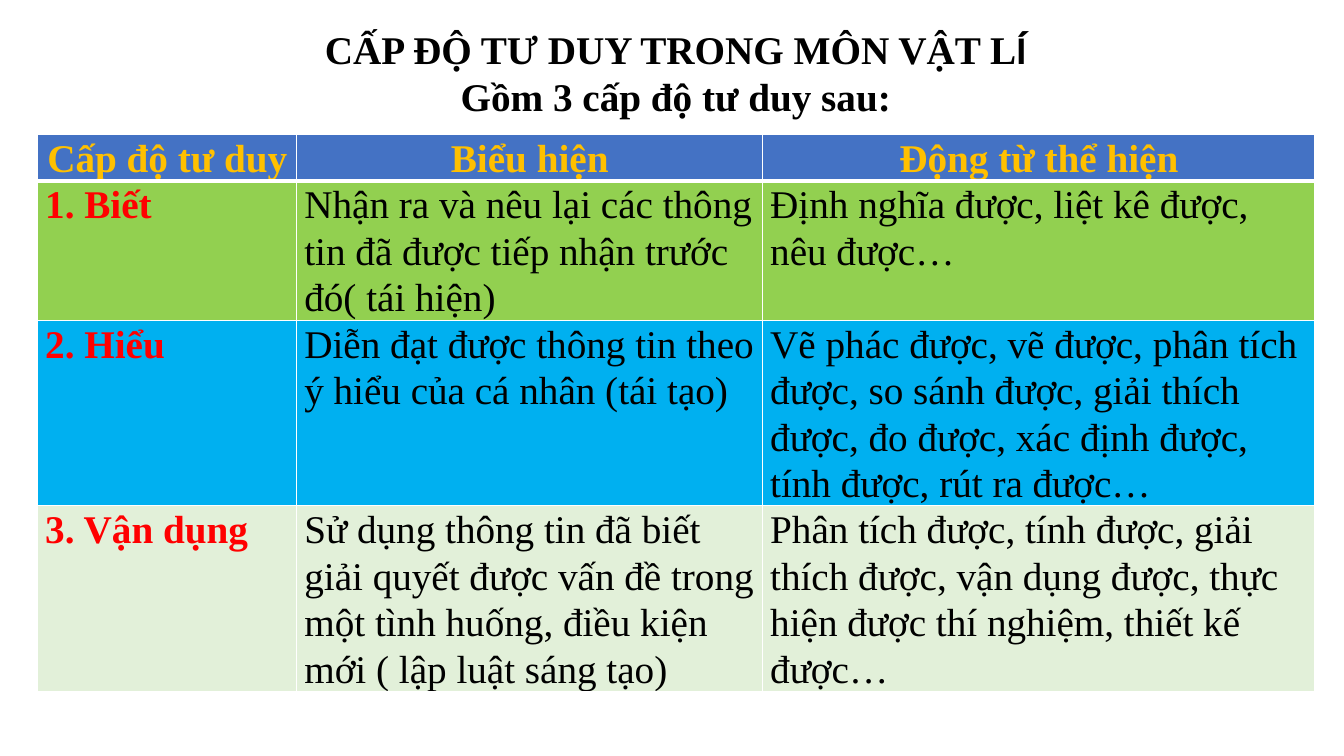
from lxml import etree
from pptx import Presentation
from pptx.dml.color import RGBColor
from pptx.enum.text import MSO_ANCHOR, PP_ALIGN
from pptx.oxml.ns import qn
from pptx.util import Cm, Pt

CENTER, LEFT = PP_ALIGN.CENTER, PP_ALIGN.LEFT
MIDDLE = MSO_ANCHOR.MIDDLE
SERIF, SANS = "Times New Roman", "Calibri"
COLORS = {
    "black": "000000", "white": "FFFFFF", "gold": "FFC000", "red": "FF0000",
    "blue": "4472C4", "green": "92D050", "sky": "00B0F0", "mint": "E2F0D9",
}
COLUMN_WIDTHS = (6.53, 11.74, 13.92)
ROW_HEIGHTS = (1.16, 3.51, 4.66, 4.66)
ROW_FILLS = ("blue", "green", "sky", "mint")
LEVELS = (
    ("Cấp độ tư duy", "Biểu hiện", "Động từ thể hiện"),
    ("1. Biết",
     "Nhận ra và nêu lại các thông tin đã được tiếp nhận trước đó( tái hiện)",
     "Định nghĩa được, liệt kê được, nêu được…"),
    ("2. Hiểu",
     "Diễn đạt được thông tin theo ý hiểu của cá nhân (tái tạo)",
     "Vẽ phác được, vẽ được, phân tích được, so sánh được, giải thích được, "
     "đo được, xác định được, tính được, rút ra được…"),
    ("3. Vận dụng",
     "Sử dụng thông tin đã biết giải quyết được vấn đề trong một tình huống, "
     "điều kiện mới ( lập luật sáng tạo)",
     "Phân tích được, tính được, giải thích được, vận dụng được, "
     "thực hiện được thí nghiệm, thiết kế được…"),
)


def add_run(paragraph, text, font=SERIF, size=28, color="black", bold=True):
    run = paragraph.add_run()
    run.text = text
    run.font.name = font
    run.font.size = Pt(size)
    run.font.bold = bold
    run.font.color.rgb = RGBColor.from_string(COLORS[color])


def set_borders(cell, widths, color="white"):
    """Draw the left, right, top and bottom borders, widths in points."""
    properties = cell._tc.get_or_add_tcPr()
    for index, (side, width) in enumerate(zip("LRTB", widths)):
        line = etree.Element(qn(f"a:ln{side}"), w=str(Pt(width)))
        fill = etree.SubElement(line, qn("a:solidFill"))
        etree.SubElement(fill, qn("a:srgbClr"), val=COLORS[color])
        properties.insert(index, line)


class SlideBuilder:
    """Holds the text style and the slide being built."""

    def __init__(self, slide, line_spacing=1.07, space_after=8, inset=0.19):
        self.slide = slide
        self.line_spacing = line_spacing
        self.space_after = Pt(space_after)
        self.inset = Cm(inset)

    def add_title(self, lines, left, top, width, height):
        """Add centred lines, each a list of (text, font) pairs."""
        box = self.slide.shapes.add_textbox(Cm(left), Cm(top), Cm(width), Cm(height))
        frame = box.text_frame
        frame.word_wrap = True
        frame.vertical_anchor = MIDDLE
        for index, line in enumerate(lines):
            paragraph = frame.add_paragraph() if index else frame.paragraphs[0]
            paragraph.alignment = CENTER
            for text, font in line:
                add_run(paragraph, text, font=font)

    def add_table(self, rows, left, top):
        table = self.slide.shapes.add_table(
            len(rows), len(COLUMN_WIDTHS), Cm(left), Cm(top),
            Cm(sum(COLUMN_WIDTHS)), Cm(sum(ROW_HEIGHTS))).table
        for column, width in zip(table.columns, COLUMN_WIDTHS):
            column.width = Cm(width)
        for row, height in zip(table.rows, ROW_HEIGHTS):
            row.height = Cm(height)
        for row_index, texts in enumerate(rows):
            for column_index, text in enumerate(texts):
                is_header, is_level = row_index == 0, column_index == 0
                self.fill_cell(
                    table.cell(row_index, column_index), text,
                    fill=ROW_FILLS[row_index],
                    color="gold" if is_header else "red" if is_level else "black",
                    bold=is_header or is_level,
                    alignment=CENTER if is_header else LEFT,
                    borders=(1, 1, 3 if row_index == 1 else 1, 3 if is_header else 1))

    def fill_cell(self, cell, text, fill, color, bold, alignment, borders):
        cell.fill.solid()
        cell.fill.fore_color.rgb = RGBColor.from_string(COLORS[fill])
        cell.margin_left = cell.margin_right = self.inset
        cell.margin_top = cell.margin_bottom = 0
        paragraph = cell.text_frame.paragraphs[0]
        paragraph.alignment = alignment
        paragraph.line_spacing = self.line_spacing
        paragraph.space_after = self.space_after
        add_run(paragraph, text, color=color, bold=bold)
        set_borders(cell, borders)


def main():
    presentation = Presentation()
    presentation.slide_width, presentation.slide_height = Cm(33.87), Cm(19.05)
    blank_layout = presentation.slide_layouts[6]
    builder = SlideBuilder(presentation.slides.add_slide(blank_layout))
    builder.add_table(LEVELS, left=0.95, top=3.39)
    builder.add_title(
        [[("CẤP ĐỘ TƯ DUY TRONG MÔN VẬT L", SERIF), ("Í", SANS)],
         [("Gồm 3 cấp độ tư duy sau:", SERIF)]],
        left=7.57, top=0.51, width=18.92, height=2.64)
    presentation.save("out.pptx")


if __name__ == "__main__":
    main()
